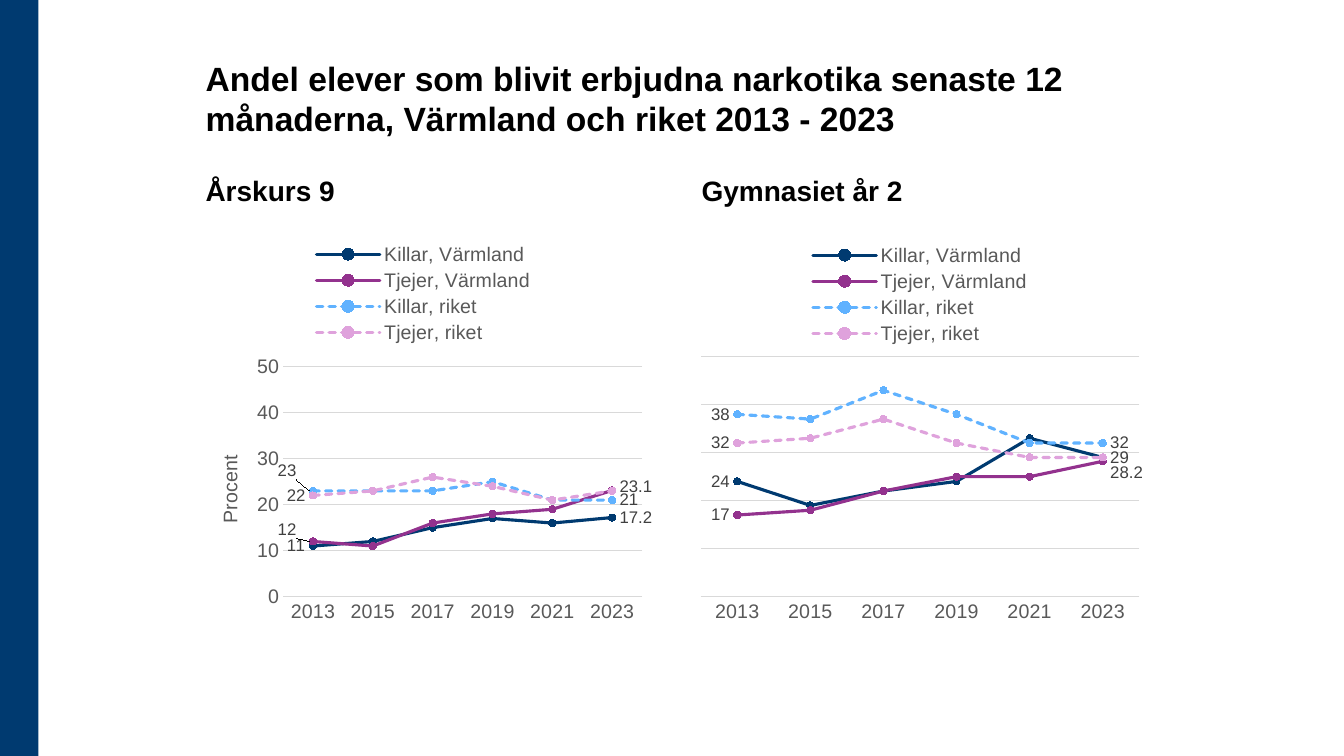
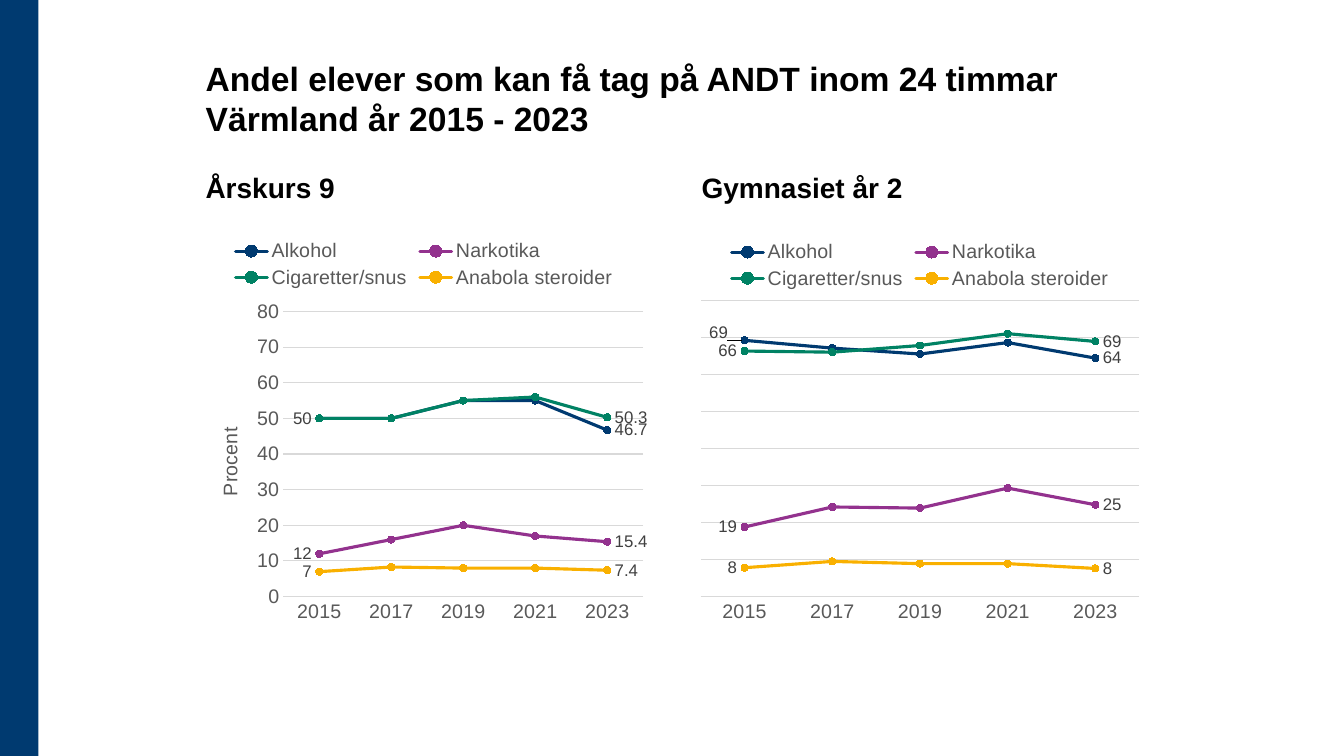
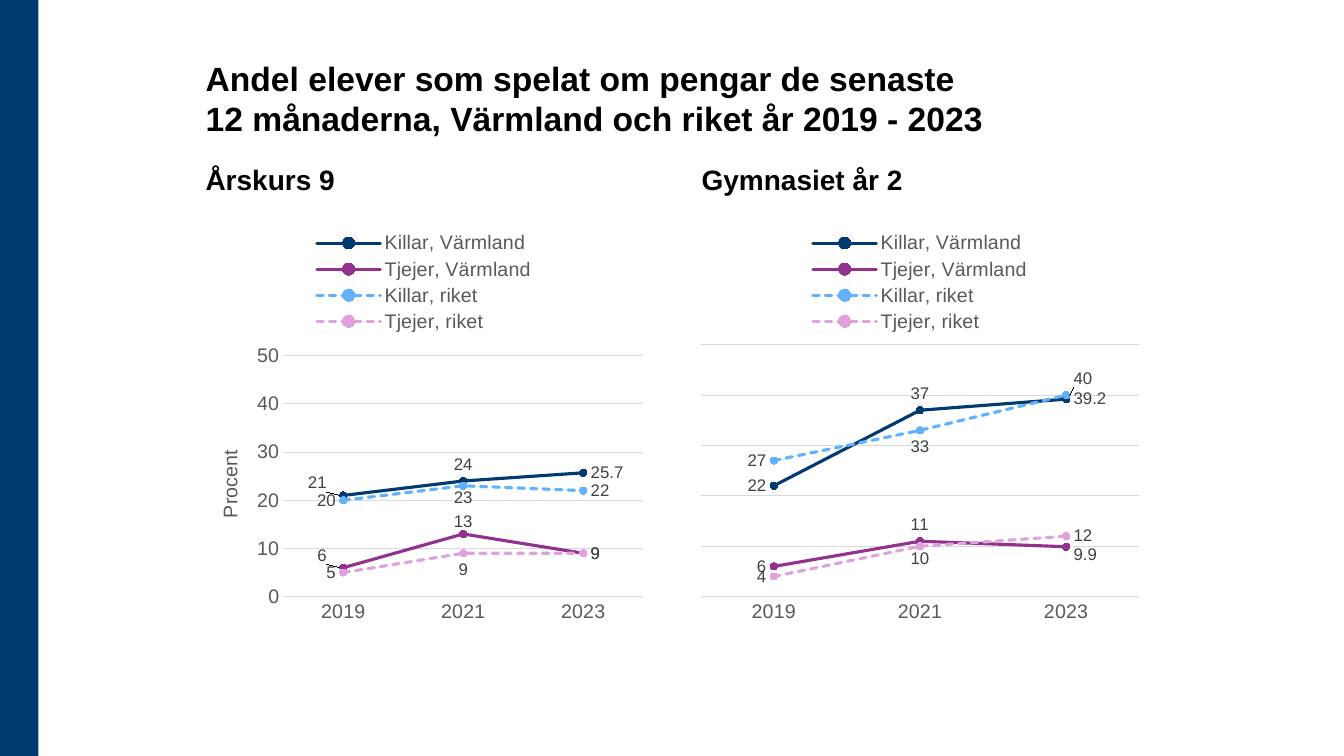
from pptx import Presentation
from pptx.chart.data import CategoryChartData
from pptx.dml.color import RGBColor
from pptx.enum.chart import (
    XL_CHART_TYPE as ChartType,
    XL_LABEL_POSITION as LabelPosition,
    XL_LEGEND_POSITION as LegendPosition,
    XL_MARKER_STYLE as MarkerStyle,
    XL_TICK_MARK as TickMark,
)
from pptx.enum.dml import MSO_LINE_DASH_STYLE as DashStyle
from pptx.enum.shapes import MSO_SHAPE as Shape
from pptx.enum.text import MSO_ANCHOR as Anchor, MSO_AUTO_SIZE as AutoSize, PP_ALIGN as Align
from pptx.oxml import parse_xml
from pptx.oxml.ns import nsdecls, qn
from pptx.util import Inches, Pt

# Shared look
COLORS = {
    "navy": "003A70", "purple": "93328E", "sky": "60B2FF", "pink": "DFA2DC",
    "green": "008264", "amber": "F9B000",
    "black": "000000", "label": "404040", "axis": "595959", "grid": "D9D9D9",
}
FONT = "Arial"

# Grid, in inches
SLIDE_WIDTH, SLIDE_HEIGHT = 13.33, 7.5
BAND_WIDTH = 0.38
COLUMN_LEFTS = (1.94, 6.86)
COLUMN_WIDTH = 4.53
TITLE_TOP, TITLE_HEIGHT = 0.64, 0.78
HEADING_TOP = 1.62
CHART_BOTTOM, PLOT_BOTTOM = 6.26, 5.92
PLOT_SIDES = ((2.81, 6.38), (6.95, 11.3))

# Series shared by charts: name, colour, dashed
GENDER_SERIES = [
    ("Killar, Värmland", "navy", False),
    ("Tjejer, Värmland", "purple", False),
    ("Killar, riket", "sky", True),
    ("Tjejer, riket", "pink", True),
]
SUBSTANCE_SERIES = [
    ("Alkohol", "navy", False),
    ("Narkotika", "purple", False),
    ("Cigaretter/snus", "green", False),
    ("Anabola steroider", "amber", False),
]
HEADINGS = ("Årskurs 9", "Gymnasiet år 2")

# Nudges and unlabelled points are keyed by (series, point); nudges are shares of the chart
SLIDES = [
    {
        "title": "Andel elever som blivit erbjudna narkotika senaste 12 "
                 "månaderna, Värmland och riket 2013 - 2023",
        "heading_height": 0.48, "years": range(2013, 2024, 2), "maximum": 50,
        "series": GENDER_SERIES,
        "charts": [
            {"top": 2.3, "plot_top": 3.64, "format": "General",
             "values": [(11, 12, 15, 17, 16, 17.2), (12, 11, 16, 18, 19, 23.1),
                        (23, 23, 23, 25, 21, 21), (22, 23, 26, 24, 21, 23)],
             "unlabelled": {(3, 5)},
             "nudges": {(1, 0): (-0.02, -0.03), (2, 0): (-0.02, -0.05), (1, 5): (0, -0.01)}},
            {"top": 2.31, "plot_top": 3.54, "format": "General",
             "values": [(24, 19, 22, 24, 33, 29), (17, 18, 22, 25, 25, 28.2),
                        (38, 37, 43, 38, 32, 32), (32, 33, 37, 32, 29, 29)],
             "unlabelled": {(3, 5)},
             "nudges": {(1, 5): (0, 0.03)}},
        ],
    },
    {
        "title": "Andel elever som kan få tag på ANDT inom 24 timmar Värmland år 2015 - 2023",
        "heading_height": 0.45, "years": range(2015, 2024, 2), "maximum": 80,
        "series": SUBSTANCE_SERIES,
        "charts": [
            {"top": 2.27, "plot_top": 3.09, "format": "General",
             "values": [(50, 50, 55, 55, 46.7), (12, 16, 20, 17, 15.4),
                        (50, 50, 55, 56, 50.3), (7, 8.3, 8, 8, 7.4)],
             "unlabelled": {(0, 0)},
             "nudges": {}},
            {"top": 2.28, "plot_top": 2.98, "format": "0",
             "values": [(69.2, 67.1, 65.5, 68.6, 64.4), (18.8, 24.2, 23.9, 29.3, 24.8),
                        (66.3, 66, 67.8, 71, 68.9), (7.8, 9.5, 8.9, 8.9, 7.6)],
             "unlabelled": set(),
             "nudges": {(0, 0): (-0.02, -0.02)}},
        ],
    },
    {
        "title": "Andel elever som spelat om pengar de senaste\v"
                 "12 månaderna, Värmland och riket år 2019 - 2023",
        "heading_height": 0.37, "years": range(2019, 2024, 2), "maximum": 50,
        "series": GENDER_SERIES,
        "charts": [
            {"top": 2.19, "plot_top": 3.53, "format": "General",
             "values": [(21, 24, 25.7), (6, 13, 9), (20, 23, 22), (5, 9, 9)],
             "unlabelled": set(),
             "nudges": {(0, 0): (-0.02, -0.03), (1, 0): (-0.02, -0.03),
                        (1, 1): (0, 0.01), (2, 1): (0, -0.01)}},
            {"top": 2.19, "plot_top": 3.42, "format": "General",
             "values": [(22, 37, 39.2), (6, 11, 9.9), (27, 33, 40), (4, 10, 12)],
             "unlabelled": set(),
             "nudges": {(1, 2): (0, 0.02), (2, 2): (0, -0.04), (3, 1): (0, -0.01)}},
        ],
    },
]

# Label extension that turns leader lines off
NO_LEADER_LINES = (
    f'<c:extLst {nsdecls("c")}><c:ext uri="{{CE6537A1-D6FC-4f65-9D91-7224C49458BB}}" '
    'xmlns:c15="http://schemas.microsoft.com/office/drawing/2012/chart">'
    '<c15:showLeaderLines val="0"/></c:ext></c:extLst>')


def style_font(font, size, color, bold=False):
    font.name, font.size, font.bold = FONT, Pt(size), bold
    font.color.rgb = RGBColor.from_string(COLORS[color])


def set_layout(parent, index, modes, **shares):
    """Give a chart part a manual layout in shares of the chart."""
    for layout in parent.findall(qn("c:layout")):
        parent.remove(layout)
    settings = "".join(f'<c:{mode} val="edge"/>' for mode in modes)
    settings += "".join(f'<c:{key} val="{value:.4f}"/>' for key, value in shares.items())
    parent.insert(index, parse_xml(
        f'<c:layout {nsdecls("c")}><c:manualLayout>{settings}</c:manualLayout></c:layout>'))


presentation = Presentation()
presentation.slide_width = Inches(SLIDE_WIDTH)
presentation.slide_height = Inches(SLIDE_HEIGHT)
title_only = presentation.slide_layouts[5]

for content in SLIDES:
    slide = presentation.slides.add_slide(title_only)

    # Side band
    band = slide.shapes.add_shape(
        Shape.RECTANGLE, 0, 0, Inches(BAND_WIDTH), Inches(SLIDE_HEIGHT))
    band.shadow.inherit = False
    band.fill.solid()
    band.fill.fore_color.rgb = RGBColor.from_string(COLORS["navy"])
    band.line.fill.background()

    # Title and column headings
    title = slide.shapes.title
    title.left, title.top = Inches(COLUMN_LEFTS[0]), Inches(TITLE_TOP)
    title.width = Inches(COLUMN_LEFTS[1] + COLUMN_WIDTH - COLUMN_LEFTS[0])
    title.height = Inches(TITLE_HEIGHT)
    texts = [(title, content["title"], 24)]
    for left, heading in zip(COLUMN_LEFTS, HEADINGS):
        box = slide.shapes.add_textbox(
            Inches(left), Inches(HEADING_TOP),
            Inches(COLUMN_WIDTH), Inches(content["heading_height"]))
        texts.append((box, heading, 20))
    for shape, text, size in texts:
        frame = shape.text_frame
        frame.word_wrap, frame.auto_size = True, AutoSize.NONE
        frame.vertical_anchor = Anchor.BOTTOM
        paragraph = frame.paragraphs[0]
        paragraph.text = text
        paragraph.alignment = Align.LEFT
        for run in paragraph.runs:
            style_font(run.font, size, "black", bold=True)

    # One line chart per column
    for column, chart_content in enumerate(content["charts"]):
        data = CategoryChartData(number_format=chart_content["format"])
        data.categories = [str(year) for year in content["years"]]
        for (name, _, _), values in zip(content["series"], chart_content["values"]):
            data.add_series(name, values)
        left, top = COLUMN_LEFTS[column], chart_content["top"]
        height = CHART_BOTTOM - top
        chart = slide.shapes.add_chart(
            ChartType.LINE_MARKERS, Inches(left), Inches(top),
            Inches(COLUMN_WIDTH), Inches(height), data).chart
        style_font(chart.font, 14, "black")
        chart.has_title = False
        chart.has_legend = True
        chart.legend.position = LegendPosition.TOP
        chart.legend.include_in_layout = False
        style_font(chart.legend.font, 14, "axis")

        # Axes and plot area
        years, scale = chart.category_axis, chart.value_axis
        scale.minimum_scale, scale.maximum_scale = 0, content["maximum"]
        scale.major_unit = 10
        for axis in (years, scale):
            axis.major_tick_mark = axis.minor_tick_mark = TickMark.NONE
            style_font(axis.tick_labels.font, 14, "axis")
        for line in (years.format.line, scale.major_gridlines.format.line):
            line.color.rgb = RGBColor.from_string(COLORS["grid"])
            line.width = Pt(0.75)
        scale.format.line.fill.background()
        plot_left, plot_right = PLOT_SIDES[column]
        plot_top = chart_content["plot_top"]
        set_layout(
            chart.element.find(".//" + qn("c:plotArea")), 0,
            ["layoutTarget", "xMode", "yMode"],
            x=(plot_left - left) / COLUMN_WIDTH, y=(plot_top - top) / height,
            w=(plot_right - plot_left) / COLUMN_WIDTH, h=(PLOT_BOTTOM - plot_top) / height)
        chart.element.find(".//" + qn("c:layoutTarget")).set("val", "inner")
        if column == 0:
            frame = scale.axis_title.text_frame
            frame.text = "Procent"
            style_font(frame.paragraphs[0].runs[0].font, 14, "axis")
            axis_title = chart.element.find(".//" + qn("c:valAx")).find(qn("c:title"))
            body = axis_title.find(".//" + qn("a:bodyPr"))
            body.set("rot", "-5400000")
            body.set("vert", "horz")
            set_layout(
                axis_title, 1, ["xMode", "yMode"], x=(2.12 - left) / COLUMN_WIDTH,
                y=((plot_top + PLOT_BOTTOM) / 2 - 0.3 - top) / height)
        else:
            scale.visible = False

        # Lines, markers and point labels
        plot = chart.plots[0]
        plot.vary_by_categories = False
        last = len(content["years"]) - 1
        for index, (series, (_, color, dashed)) in enumerate(zip(plot.series, content["series"])):
            series.smooth = False
            rgb = RGBColor.from_string(COLORS[color])
            series.format.line.color.rgb = rgb
            series.format.line.width = Pt(2.25)
            if dashed:
                series.format.line.dash_style = DashStyle.SQUARE_DOT
            series._element.find(qn("c:spPr")).find(qn("a:ln")).set("cap", "rnd")
            series.marker.style, series.marker.size = MarkerStyle.CIRCLE, 5
            series.marker.format.fill.solid()
            series.marker.format.fill.fore_color.rgb = rgb
            series.marker.format.line.color.rgb = rgb
            series.data_labels.show_value = False
            positions = {0: LabelPosition.LEFT, last: LabelPosition.RIGHT}
            if last == 2:
                positions[1] = LabelPosition.BELOW if dashed else LabelPosition.ABOVE
            for point, position in positions.items():
                if (index, point) in chart_content["unlabelled"]:
                    continue
                label = series.points[point].data_label
                style_font(label.font, 12, "label")
                label.position = position
                if (index, point) in chart_content["nudges"]:
                    x, y = chart_content["nudges"][index, point]
                    element = series._element.xpath(f'.//c:dLbl[c:idx/@val="{point}"]')[0]
                    set_layout(element, 1, [], x=x, y=y)
            series._element.find(qn("c:dLbls")).append(parse_xml(NO_LEADER_LINES))

presentation.save("out.pptx")
